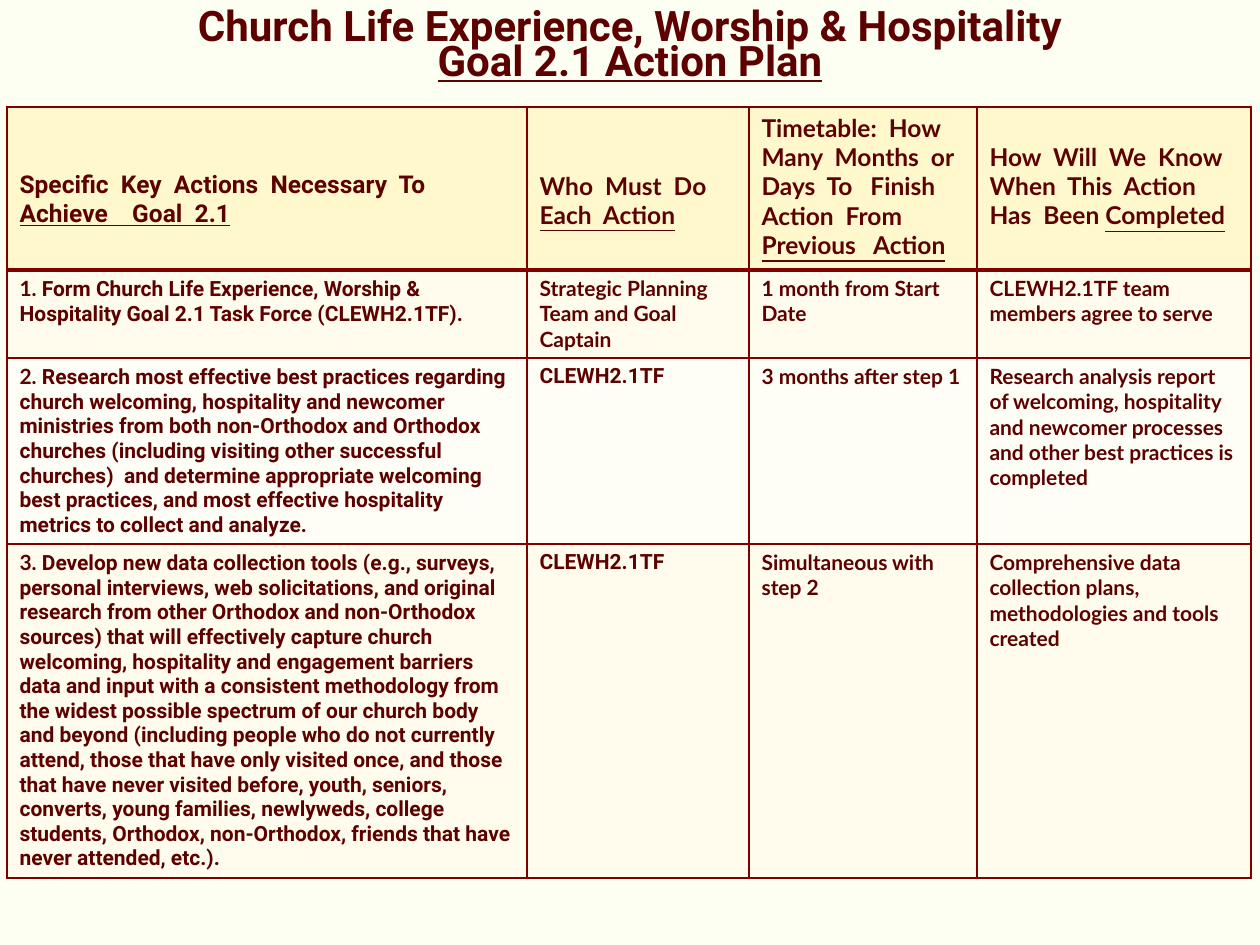
"""Build the Goal 2.1 action plan slide."""
from dataclasses import dataclass

from lxml.etree import SubElement as Sub
from pptx import Presentation
from pptx.dml.color import RGBColor as Rgb
from pptx.enum.text import MSO_ANCHOR as Anchor, MSO_AUTO_SIZE as Fit, PP_ALIGN as Align
from pptx.oxml.ns import qn
from pptx.util import Emu, Pt


@dataclass(frozen=True)
class Theme:
    back: str = "FEFFF3"
    ink: str = "5D0100"
    line: str = "800000"
    head: str = "FFF8CD"
    odd: str = "FFFCED"
    even: str = "FFFEF6"
    sans: str = "Roboto"
    soft: str = "Lato"
    title: int = 24
    label: int = 14
    body: int = 12


@dataclass(frozen=True)
class Bit:
    text: str
    font: str
    under: bool = False


@dataclass(frozen=True)
class Entry:
    bits: tuple[Bit, ...]
    lead: int = 0


@dataclass(frozen=True)
class Row:
    high: int
    fill: str
    size: int
    base: int
    cells: tuple[Entry, ...]


T = Theme()
COLS = (520, 222, 228, 274)
LEFT, TOP = 7, 107
PAD, LEAD = 6, 29


def px(n: int) -> Emu:
    return Emu(round(n * 914400 / 126))


def label(text: str, last: str, lead: int, font: str = T.soft) -> Entry:
    return Entry((Bit(text, font), Bit(last, font, True)), lead)


def step(mark: str, text: str, who: Bit, when: str, proof: str) -> tuple[Entry, ...]:
    return (Entry((Bit(mark, T.soft), Bit(text, T.sans))), Entry((who,)),
            Entry((Bit(when, T.soft),)), Entry((Bit(proof, T.soft),)))


TEAM = Bit("CLEWH2.1TF", T.sans)
ROWS = (
    Row(163, T.head, T.label, 3, (
        label("Specific  Key  Actions  Necessary  To ", "Achieve    Goal  2.1", 2, T.sans),
        label("Who  Must  Do ", "Each  Action", 2),
        label("Timetable:  How Many  Months  or Days  To   Finish  Action  From ",
              "Previous   Action", 0),
        label("How  Will  We  Know  When  This  Action Has  Been ", "Completed", 1))),
    Row(88, T.odd, T.body, 1, step(
        "1. ", "Form Church Life Experience, Worship & Hospitality Goal 2.1 Task Force "
        "(CLEWH2.1TF).",
        Bit("Strategic Planning Team and Goal Captain", T.soft),
        "1 month from Start Date", "CLEWH2.1TF team members agree to serve")),
    Row(186, T.even, T.body, 1, step(
        "2.", " Research most effective best practices regarding church welcoming, "
        "hospitality and newcomer ministries from both non-Orthodox and Orthodox churches "
        "(including visiting other successful churches)  and determine appropriate "
        "welcoming best practices, and most effective hospitality metrics to collect and "
        "analyze.",
        TEAM, "3 months after step 1",
        "Research analysis report of welcoming, hospitality and newcomer processes and "
        "other best practices is completed")),
    Row(334, T.odd, T.body, 1, step(
        "3. ", "Develop new data collection tools (e.g., surveys, personal interviews, web "
        "solicitations, and original research from other Orthodox and non-Orthodox sources) "
        "that will effectively capture church welcoming, hospitality and engagement barriers "
        "data and input with a consistent methodology from the widest possible spectrum of "
        "our church body and beyond (including people who do not currently attend, those "
        "that have only visited once, and those that have never visited before, youth, "
        "seniors, converts, young families, newlyweds, college students, Orthodox, "
        "non-Orthodox, friends that have never attended, etc.).",
        TEAM, "Simultaneous with step 2",
        "Comprehensive data collection plans, methodologies and tools created")),
)


def style(run, bit: Bit, size: int) -> None:
    font = run.font
    font.name, font.size, font.bold = bit.font, Pt(size), True
    font.underline = bit.under
    font.color.rgb = Rgb.from_string(T.ink)


def edge(cell, base: int) -> None:
    props = cell._tc.get_or_add_tcPr()
    for side, wide in (("L", 1), ("R", 1), ("T", 1), ("B", base)):
        line = Sub(props, qn(f"a:ln{side}"), w=str(Pt(wide)))
        Sub(Sub(line, qn("a:solidFill")), qn("a:srgbClr"), val=T.line)


def draw_cell(cell, entry: Entry, row: Row) -> None:
    edge(cell, row.base)
    cell.fill.solid()
    cell.fill.fore_color.rgb = Rgb.from_string(row.fill)
    cell.margin_top = px(PAD + LEAD * entry.lead)
    para = cell.text_frame.paragraphs[0]
    for bit in entry.bits:
        run = para.add_run()
        run.text = bit.text
        style(run, bit, row.size)


def draw_table(slide) -> None:
    high = sum(row.high for row in ROWS)
    grid = slide.shapes.add_table(len(ROWS), len(COLS), px(LEFT), px(TOP),
                                  px(sum(COLS)), px(high)).table
    for col, wide in zip(grid.columns, COLS):
        col.width = px(wide)
    for i, row in enumerate(ROWS):
        grid.rows[i].height = px(row.high)
        for j, entry in enumerate(row.cells):
            draw_cell(grid.cell(i, j), entry, row)


def draw_title(slide) -> None:
    head = slide.shapes.title
    head.left, head.top, head.width, head.height = map(px, (83, -30, 1094, 157))
    frame = head.text_frame
    frame.auto_size, frame.word_wrap = Fit.NONE, True
    frame.vertical_anchor = Anchor.MIDDLE
    para = frame.paragraphs[0]
    para.text = "Church Life Experience, Worship & Hospitality\vGoal 2.1 Action Plan"
    para.alignment, para.line_spacing = Align.CENTER, 0.7
    para.font.size = Pt(T.title)
    for run, under in zip(para.runs, (False, True)):
        style(run, Bit(run.text, T.sans, under), T.title)


def main() -> None:
    deck = Presentation()
    deck.slide_width, deck.slide_height = px(1260), px(945)
    slide = deck.slides.add_slide(deck.slide_layouts[5])
    slide.background.fill.solid()
    slide.background.fill.fore_color.rgb = Rgb.from_string(T.back)
    draw_table(slide)
    draw_title(slide)
    deck.save("out.pptx")


if __name__ == "__main__":
    main()
